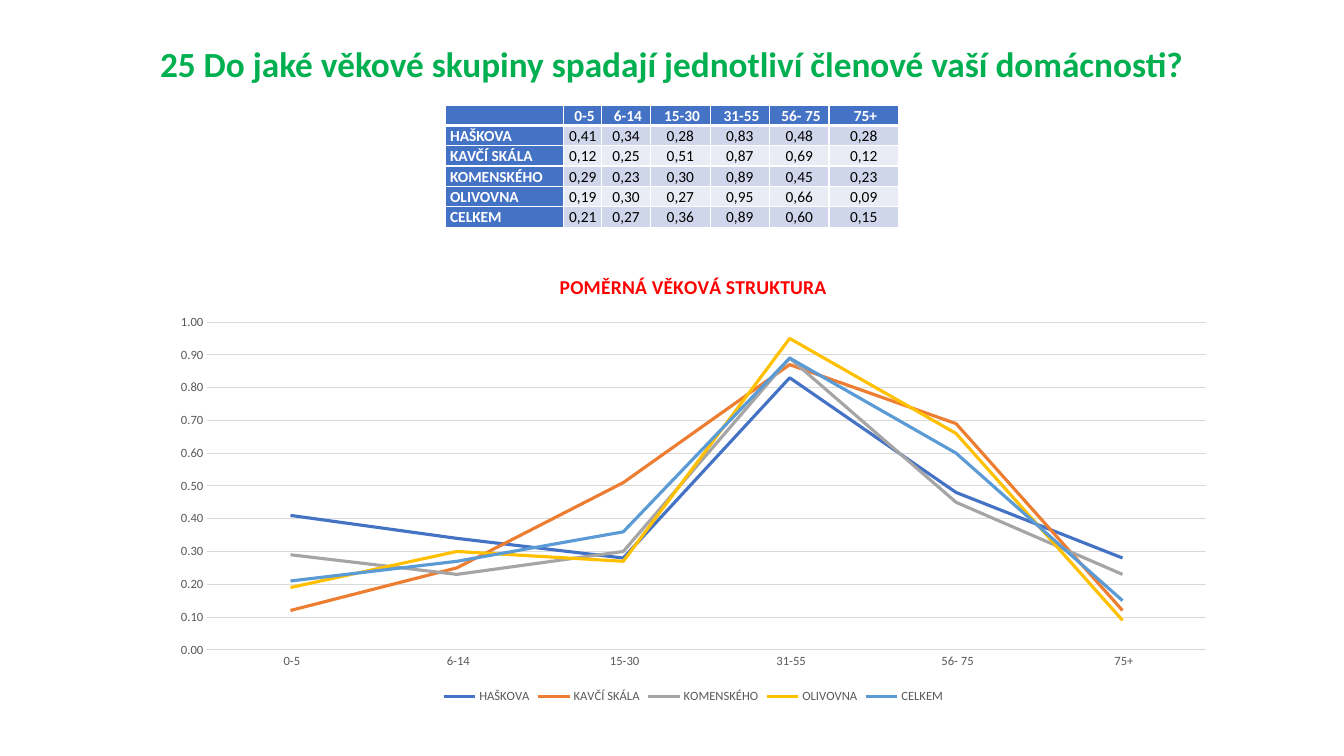
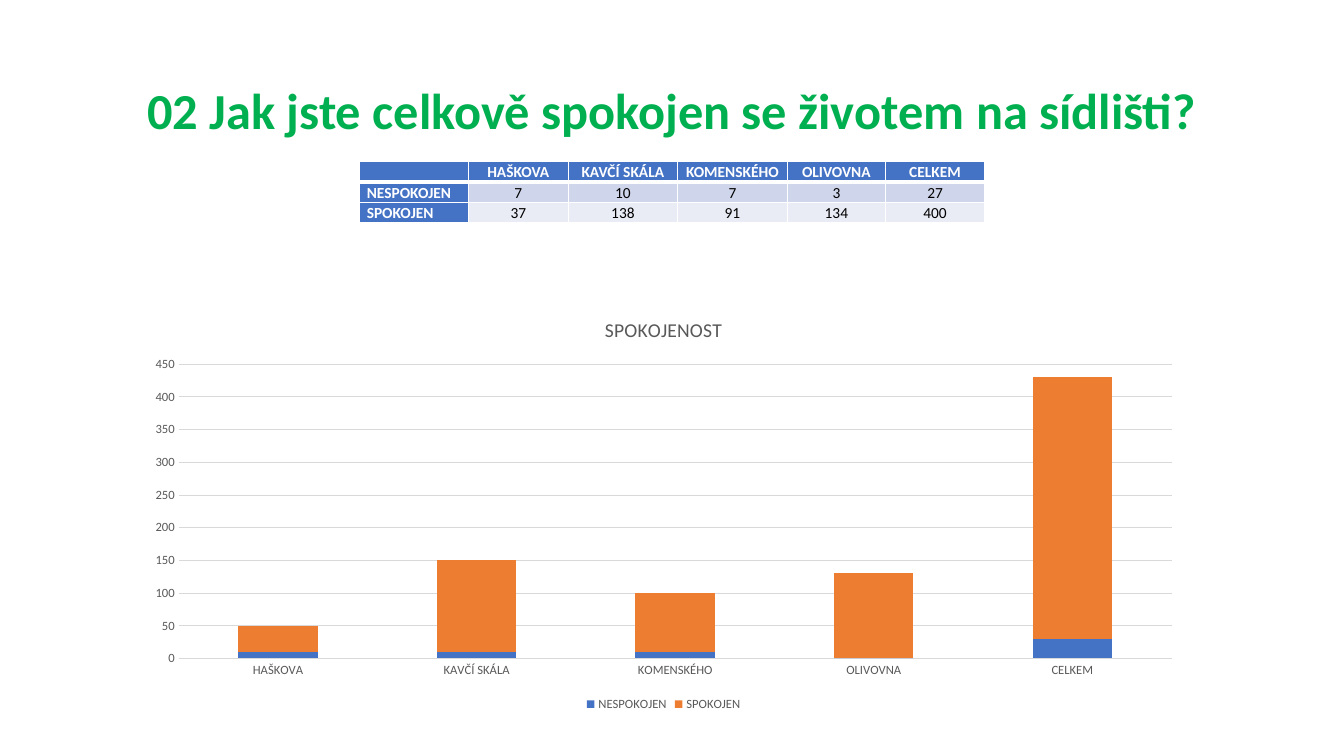
from dataclasses import dataclass

from lxml.etree import Element, SubElement
from pptx import Presentation
from pptx.chart.chart import Chart
from pptx.chart.data import CategoryChartData as ChartData
from pptx.dml.color import RGBColor as Rgb
from pptx.enum.chart import XL_CHART_TYPE as Kind
from pptx.enum.chart import XL_LEGEND_POSITION as Place
from pptx.enum.chart import XL_TICK_MARK as Tick
from pptx.enum.text import MSO_ANCHOR as Anchor
from pptx.enum.text import MSO_AUTO_SIZE as Fit
from pptx.enum.text import PP_ALIGN as Align
from pptx.oxml.ns import qn
from pptx.slide import Slide
from pptx.table import _Cell as Cell
from pptx.text.text import Font
from pptx.util import Pt

# Shared look
FACE = "Calibri"
GREEN = Rgb(0x00, 0xB0, 0x50)
RED = Rgb(0xFF, 0x00, 0x00)
BLACK = Rgb(0x00, 0x00, 0x00)
WHITE = Rgb(0xFF, 0xFF, 0xFF)
GRAY = Rgb(0x59, 0x59, 0x59)
PALE = Rgb(0xD9, 0xD9, 0xD9)
BLUE = Rgb(0x44, 0x72, 0xC4)
ORANGE = Rgb(0xED, 0x7D, 0x31)
SILVER = Rgb(0xA5, 0xA5, 0xA5)
GOLD = Rgb(0xFF, 0xC0, 0x00)
SKY = Rgb(0x5B, 0x9B, 0xD5)
BANDS = (Rgb(0xCF, 0xD5, 0xEA), Rgb(0xE9, 0xEB, 0xF5))
HUES = (BLUE, ORANGE, SILVER, GOLD, SKY)
ROW = 14.5


@dataclass
class Grid:
    left: float
    top: float
    widths: list[float]
    inset: float
    head_fix: Anchor
    side_fix: Anchor
    body_fix: Anchor


@dataclass
class Plot:
    kind: Kind
    box: tuple[float, float, float, float]
    title: str
    color: Rgb
    bold: bool
    top: float
    step: float
    digits: str
    places: int


@dataclass
class Page:
    title: str
    size: float
    height: float
    heads: list[str]
    rows: dict[str, list[str]]
    grid: Grid
    plot: Plot


PAGES = [
    Page(
        "25 Do jaké věkové skupiny spadají jednotliví členové vaší domácnosti?",
        25.2, 37,
        [" 0-5", " 6-14", " 15-30", " 31-55", " 56- 75", " 75+"],
        {
            "HAŠKOVA": ["0,41", "0,34", "0,28", "0,83", "0,48", "0,28"],
            "KAVČÍ SKÁLA": ["0,12", "0,25", "0,51", "0,87", "0,69", "0,12"],
            "KOMENSKÉHO": ["0,29", "0,23", "0,30", "0,89", "0,45", "0,23"],
            "OLIVOVNA": ["0,19", "0,30", "0,27", "0,95", "0,66", "0,09"],
            "CELKEM": ["0,21", "0,27", "0,36", "0,89", "0,60", "0,15"],
        },
        Grid(318.3, 75, [84.5, 27, 35, 42.5, 42.5, 42.5, 49.5], 3.2,
             Anchor.MIDDLE, Anchor.BOTTOM, Anchor.MIDDLE),
        Plot(Kind.LINE, (114, 182.4, 762.5, 323), "POMĚRNÁ VĚKOVÁ STRUKTURA",
             RED, True, 1, 0.1, "0.00", 2),
    ),
    Page(
        "02 Jak jste celkově spokojen se životem na sídlišti?",
        36, 104,
        ["HAŠKOVA", "KAVČÍ SKÁLA", "KOMENSKÉHO", "OLIVOVNA", "CELKEM"],
        {
            "NESPOKOJEN": ["7", "10", "7", "3", "27"],
            "SPOKOJEN": ["37", "138", "91", "134", "400"],
        },
        Grid(257, 115.5, [77.5, 71.5, 78, 78.5, 70, 71], 5,
             Anchor.TOP, Anchor.TOP, Anchor.TOP),
        Plot(Kind.COLUMN_STACKED, (96, 213.6, 756, 297.5), "SPOKOJENOST",
             GRAY, False, 450, 50, "General", -1),
    ),
]


def style(font: Font, size: float, color: Rgb, bold: bool = False) -> None:
    font.name, font.size, font.bold = FACE, Pt(size), bold
    font.color.rgb = color


def add_title(slide: Slide, page: Page) -> None:
    title = slide.shapes.title
    title.left, title.top = Pt(66), Pt(29)
    title.width, title.height = Pt(828), Pt(page.height)
    frame = title.text_frame
    frame.text = page.title
    frame.word_wrap, frame.auto_size = True, Fit.NONE
    frame.vertical_anchor = Anchor.MIDDLE
    para = frame.paragraphs[0]
    para.alignment, para.line_spacing = Align.CENTER, 0.9
    style(para.runs[0].font, page.size, GREEN, True)


def set_edges(cell: Cell, top: float, base: float) -> None:
    props = cell._tc.get_or_add_tcPr()
    sides = {"a:lnL": 1, "a:lnR": 1, "a:lnT": top, "a:lnB": base}
    # Borders must come before the fill
    for spot, (tag, width) in enumerate(sides.items()):
        line = Element(qn(tag), w=str(Pt(width)))
        fill = SubElement(line, qn("a:solidFill"))
        SubElement(fill, qn("a:srgbClr"), val=str(WHITE))
        props.insert(spot, line)


def fill_cell(cell: Cell, text: str, row: int, col: int, grid: Grid) -> None:
    head, side = row == 0, col == 0
    label = head or side
    cell.fill.solid()
    cell.fill.fore_color.rgb = BLUE if label else BANDS[(row - 1) % 2]
    set_edges(cell, 3 if row == 1 else 1, 3 if head else 1)
    cell.margin_left = cell.margin_right = Pt(grid.inset)
    cell.margin_top = cell.margin_bottom = Pt(0)
    cell.vertical_anchor = (grid.head_fix if head else
                            grid.side_fix if side else grid.body_fix)
    para = cell.text_frame.paragraphs[0]
    para.text = text
    para.alignment = Align.LEFT if side else Align.CENTER
    para.line_spacing, para.space_after = 1.07, Pt(8)
    for run in para.runs:
        style(run.font, 11, WHITE if label else BLACK, label)
    if not text:
        SubElement(para._p, qn("a:endParaRPr"), sz="1100")


def add_grid(slide: Slide, page: Page) -> None:
    grid = page.grid
    lines = [["", *page.heads]]
    lines += [[name, *cells] for name, cells in page.rows.items()]
    table = slide.shapes.add_table(
        len(lines), len(grid.widths), Pt(grid.left), Pt(grid.top),
        Pt(sum(grid.widths)), Pt(ROW * len(lines))).table
    for col, width in zip(table.columns, grid.widths):
        col.width = Pt(width)
    for row, line in enumerate(lines):
        table.rows[row].height = Pt(ROW)
        for col, text in enumerate(line):
            fill_cell(table.cell(row, col), text, row, col, grid)


def style_axes(chart: Chart, plot: Plot) -> None:
    cats, vals = chart.category_axis, chart.value_axis
    for axis in (cats, vals):
        axis.major_tick_mark = axis.minor_tick_mark = Tick.NONE
        style(axis.tick_labels.font, 9, GRAY)
    vals.has_major_gridlines = True
    for line in (cats.format.line, vals.major_gridlines.format.line):
        line.color.rgb, line.width = PALE, Pt(0.75)
    vals.format.line.fill.background()
    vals.minimum_scale, vals.maximum_scale = 0, plot.top
    vals.major_unit = plot.step
    vals.tick_labels.number_format = plot.digits
    vals.tick_labels.number_format_is_linked = False


def add_plot(slide: Slide, page: Page) -> None:
    plot = page.plot
    data = ChartData(number_format=plot.digits)
    data.categories = page.heads
    for name, cells in page.rows.items():
        nums = [float(cell.replace(",", ".")) for cell in cells]
        data.add_series(name, [round(num, plot.places) for num in nums])
    box = [Pt(side) for side in plot.box]
    chart = slide.shapes.add_chart(plot.kind, *box, data).chart
    style(chart.font, 10, BLACK)
    # Title and legend
    chart.has_title = True
    para = chart.chart_title.text_frame.paragraphs[0]
    para.text = plot.title
    style(para.runs[0].font, 14, plot.color, plot.bold)
    chart.has_legend = True
    chart.legend.position = Place.BOTTOM
    chart.legend.include_in_layout = False
    style(chart.legend.font, 9, GRAY)
    style_axes(chart, plot)
    # Series
    body = chart.plots[0]
    body.vary_by_categories = False
    if plot.kind == Kind.COLUMN_STACKED:
        body.gap_width, body.overlap = 150, 100
    for series, hue in zip(body.series, HUES):
        if plot.kind == Kind.LINE:
            series.smooth = False
            series.format.line.color.rgb = hue
            series.format.line.width = Pt(2.25)
        else:
            series.format.fill.solid()
            series.format.fill.fore_color.rgb = hue


def main() -> None:
    deck = Presentation()
    deck.slide_width, deck.slide_height = Pt(960), Pt(540)
    for page in PAGES:
        slide = deck.slides.add_slide(deck.slide_layouts[5])
        add_title(slide, page)
        add_grid(slide, page)
        add_plot(slide, page)
    deck.save("out.pptx")


if __name__ == "__main__":
    main()
